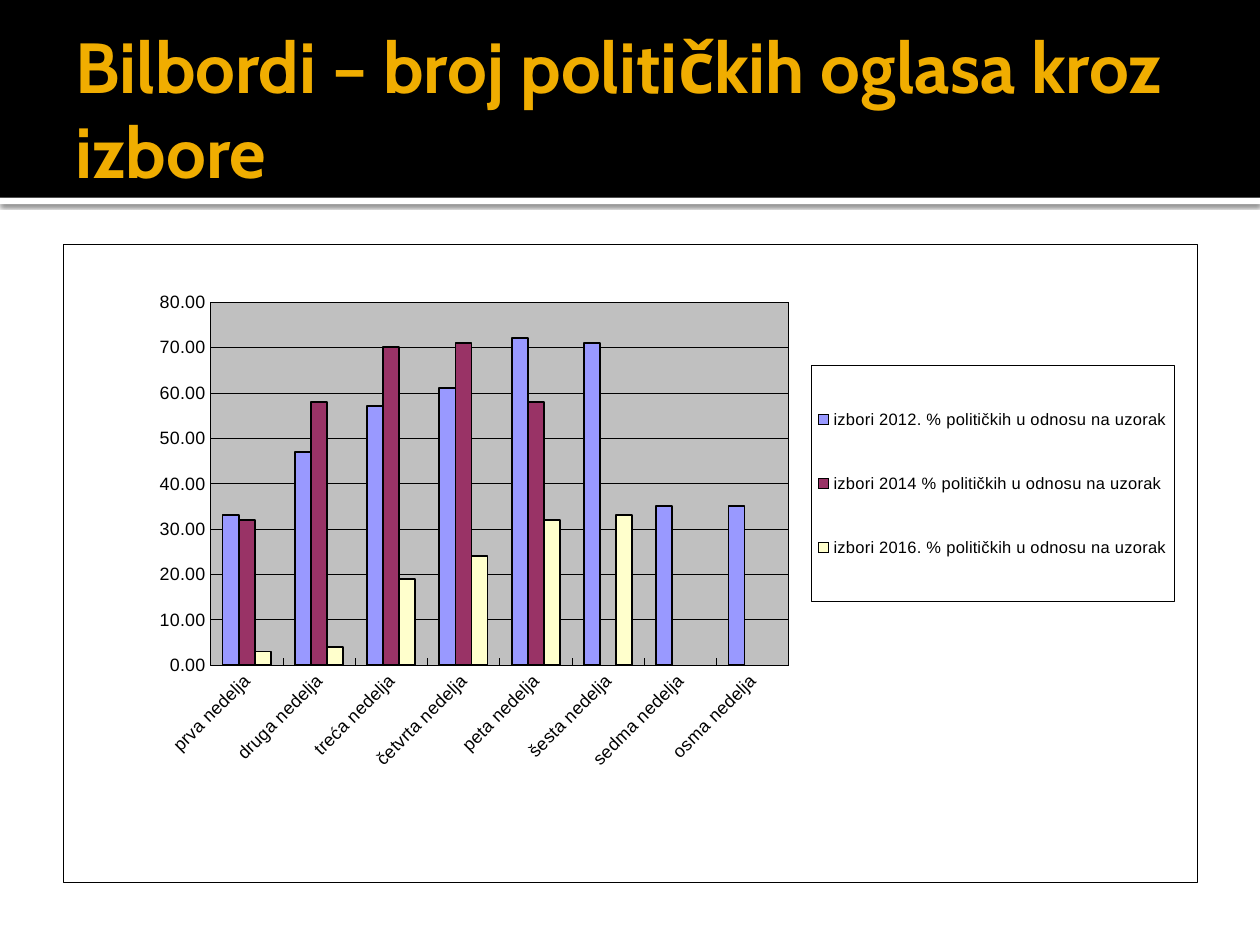
from pptx import Presentation
from pptx.chart.data import CategoryChartData as Data
from pptx.dml.color import RGBColor as RGB
from pptx.enum.chart import XL_CHART_TYPE as Kind, XL_LEGEND_POSITION as Side
from pptx.enum.chart import XL_TICK_MARK as Tick
from pptx.enum.shapes import MSO_SHAPE as Shape
from pptx.enum.text import MSO_ANCHOR as Anchor
from pptx.oxml import parse_xml
from pptx.oxml.ns import nsdecls, qn
from pptx.util import Inches, Pt

HUES = {
    "black": "000000", "white": "FFFFFF", "gold": "F0AD00", "grey": "C0C0C0",
    "blue": "9999FF", "plum": "993366", "cream": "FFFFCC",
}
WEEKS = ["prva", "druga", "treća", "četvrta", "peta", "šesta", "sedma", "osma"]
POLLS = [
    ("izbori 2012.", "blue", [33, 47, 57, 61, 72, 71, 35, 35]),
    ("izbori 2014", "plum", [32, 58, 70, 71, 58, None, None, None]),
    ("izbori 2016.", "cream", [3, 4, 19, 24, 32, 33, None, None]),
]


def frame(fill):
    """Fill and thin black outline for a chart part."""
    return parse_xml(
        f'<c:spPr {nsdecls("c", "a")}>'
        f'<a:solidFill><a:srgbClr val="{HUES[fill]}"/></a:solidFill>'
        f'<a:ln w="3175"><a:solidFill><a:srgbClr val="{HUES["black"]}"/>'
        '</a:solidFill></a:ln></c:spPr>')


def place(part, spot, index, inner=False):
    """Set a chart part at x, y, width, height as shares of the chart."""
    for old in part.findall(qn("c:layout")):
        part.remove(old)
    goal = '<c:layoutTarget val="inner"/>' if inner else ""
    modes = '<c:xMode val="edge"/><c:yMode val="edge"/>'
    sizes = "".join(f'<c:{k} val="{v}"/>' for k, v in zip("xywh", spot))
    part.insert(index, parse_xml(
        f'<c:layout {nsdecls("c")}><c:manualLayout>{goal}{modes}{sizes}'
        '</c:manualLayout></c:layout>'))


class Deck:
    def __init__(self):
        self.prs = Presentation()
        self.prs.slide_width, self.prs.slide_height = Inches(10), Inches(7.5)
        self.slide = self.prs.slides.add_slide(self.prs.slide_layouts[6])

    def color(self, name):
        return RGB.from_string(HUES[name])

    def font(self, font, face, size, hue, bold=False):
        font.name, font.size, font.bold = face, Pt(size), bold
        font.color.rgb = self.color(hue)

    def line(self, line, width):
        line.color.rgb = self.color("black")
        line.width = Pt(width)

    def band(self, top, height, hue, shade=False):
        box = self.slide.shapes.add_shape(
            Shape.RECTANGLE, 0, Inches(top), Inches(10), Inches(height))
        box.shadow.inherit = False
        box.fill.solid()
        box.fill.fore_color.rgb = self.color(hue)
        box.line.fill.background()
        if shade:
            box._element.spPr.find(qn("a:effectLst")).append(parse_xml(
                f'<a:outerShdw {nsdecls("a")} blurRad="31750" dist="10160" '
                f'dir="5400000" rotWithShape="0"><a:srgbClr val="{HUES["black"]}">'
                '<a:alpha val="60000"/></a:srgbClr></a:outerShdw>'))

    def title(self, text):
        box = self.slide.shapes.add_textbox(
            Inches(0.5), Inches(0.17), Inches(9), Inches(1.37))
        body = box.text_frame
        body.word_wrap = True
        body.vertical_anchor = Anchor.MIDDLE
        body.margin_left, body.margin_right = Inches(0.1), Inches(0.05)
        run = body.paragraphs[0].add_run()
        run.text = text
        self.font(run.font, "Cabin", 40.5, "gold", True)

    def axis(self, axis):
        axis.major_tick_mark, axis.minor_tick_mark = Tick.INSIDE, Tick.NONE
        self.font(axis.tick_labels.font, "Arial", 10.2, "black")
        self.line(axis.format.line, 0.25)

    def chart(self):
        data = Data(number_format="0.00")
        data.categories = [f"{week} nedelja" for week in WEEKS]
        for poll, _, vals in POLLS:
            data.add_series(f"{poll} % političkih u odnosu na uzorak", vals)
        chart = self.slide.shapes.add_chart(
            Kind.COLUMN_CLUSTERED, Inches(0.5), Inches(1.94),
            Inches(9), Inches(5.06), data).chart
        chart.has_title = False
        self.font(chart.font, "Arial", 10.2, "black")

        # Columns
        plot = chart.plots[0]
        plot.gap_width, plot.overlap = 150, 0
        plot.vary_by_categories = False
        for bars, (_, hue, _) in zip(plot.series, POLLS):
            bars.format.fill.solid()
            bars.format.fill.fore_color.rgb = self.color(hue)
            bars.invert_if_negative = False
            self.line(bars.format.line, 1)

        # Axes
        cats, vals = chart.category_axis, chart.value_axis
        self.axis(cats)
        self.axis(vals)
        turn = cats._element.find(qn("c:txPr")).find(qn("a:bodyPr"))
        turn.set("rot", "-2700000")
        turn.set("vert", "horz")
        vals.minimum_scale, vals.maximum_scale, vals.major_unit = 0, 80, 10
        vals.tick_labels.number_format = "0.00"
        vals.tick_labels.number_format_is_linked = False
        self.line(vals.major_gridlines.format.line, 0.25)

        # Legend
        chart.has_legend = True
        key = chart.legend
        key.position = Side.RIGHT
        key.include_in_layout = False
        self.font(key.font, "Arial", 9.4, "black")
        place(key._element, (0.66, 0.19, 0.32, 0.37), 1)
        key._element.find(qn("c:txPr")).addprevious(frame("white"))

        # Plot area and outer frame
        root = chart._chartSpace
        area = root.chart.plotArea
        place(area, (0.13, 0.09, 0.51, 0.57), 0, inner=True)
        area.append(frame("grey"))
        root.chart.addnext(frame("white"))
        if root.find(qn("c:roundedCorners")) is None:
            root.find(qn("c:date1904")).addnext(
                parse_xml(f'<c:roundedCorners {nsdecls("c")} val="0"/>'))


def main():
    deck = Deck()
    # Header
    deck.band(1.57, 0.05, "white", shade=True)
    deck.band(0, 1.57, "black")
    deck.title("Bilbordi – broj političkih oglasa kroz izbore")
    # Ads by week
    deck.chart()
    deck.prs.save("out.pptx")


if __name__ == "__main__":
    main()
